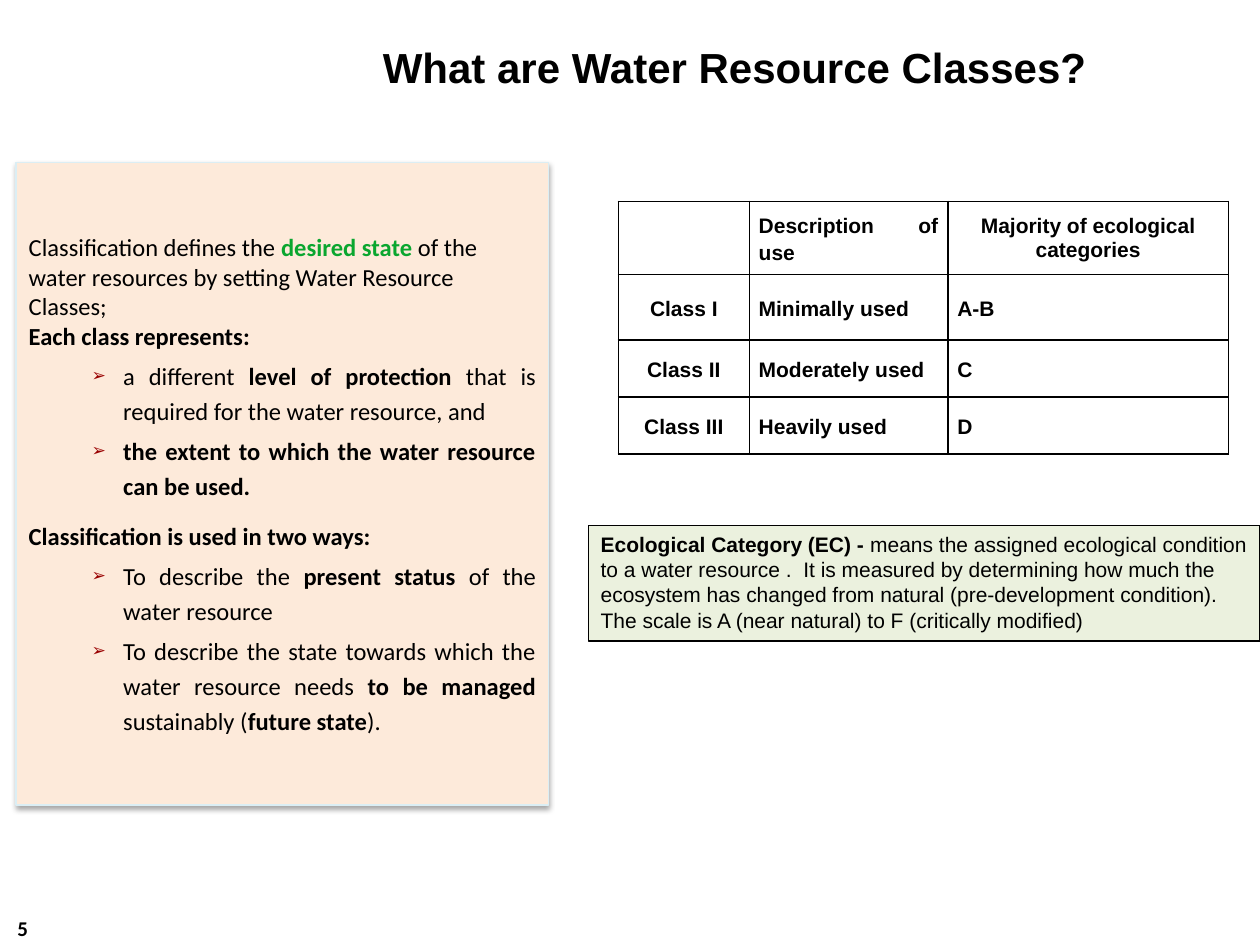
from lxml import etree
from pptx import Presentation
from pptx.dml.color import RGBColor
from pptx.enum import shapes, text
from pptx.oxml import ns
from pptx.util import Pt

COLORS = {
    "black": "000000", "white": "FFFFFF", "green": "0AA62F", "bullet": "990000",
    "peach": "FDEADA", "pale blue": "DBEEF4", "pale green": "EBF1DE",
}
LEFT, CENTER, JUSTIFY = text.PP_ALIGN.LEFT, text.PP_ALIGN.CENTER, text.PP_ALIGN.JUSTIFY


def add_xml(parent, tag, **attributes):
    return etree.SubElement(parent, ns.qn(tag), attributes)


def add_run(para, words, font, size, bold=False, color="black"):
    span = para.add_run()
    span.text = words
    span.font.name, span.font.size, span.font.bold = font, Pt(size), bold
    span.font.color.rgb = RGBColor.from_string(COLORS[color])


deck = Presentation()
deck.slide_width, deck.slide_height = Pt(720), Pt(540)
page = deck.slides.add_slide(deck.slide_layouts[1])

# Title
title = page.shapes.title
title.left, title.top, title.width, title.height = Pt(133.2), Pt(20.2), Pt(573.1), Pt(54.7)
title.text_frame.auto_size = text.MSO_AUTO_SIZE.NONE
title.text_frame.vertical_anchor = text.MSO_ANCHOR.TOP
title_para = title.text_frame.paragraphs[0]
title_para.alignment = CENTER
add_run(title_para, "What are Water Resource Classes?", "Arial", 24, True)

# Classification panel: (is bullet, space after, runs of words, bold, colour)
panel_lines = [
    (False, 0, [("Classification defines the ", False), ("desired state ", True, "green"),
                ("of the water resources by setting Water Resource Classes;", False)]),
    (False, 0, [("Each class represents:", True)]),
    (True, 0, [("a different ", False), ("level of protection ", True),
               ("that is required for the water resource, and", False)]),
    (True, 12, [("the extent to which the water resource can be used.", True)]),
    (False, 0, [("Classification is used in two ways:", True)]),
    (True, 0, [("To describe the ", False), ("present status ", True),
               ("of the water resource", False)]),
    (True, 0, [("To describe the state towards which the water resource needs ", False),
               ("to be managed ", True), ("sustainably (", False),
               ("future state", True), (").", False)]),
]
panel = page.placeholders[1]
panel.left, panel.top, panel.width, panel.height = Pt(9.2), Pt(93), Pt(304.2), Pt(367)
panel.fill.solid()
panel.fill.fore_color.rgb = RGBColor.from_string(COLORS["peach"])
panel.line.color.rgb = RGBColor.from_string(COLORS["pale blue"])
panel.line.width = Pt(0.75)
effects = add_xml(panel.element.spPr, "a:effectLst")
shadow = add_xml(effects, "a:outerShdw", blurRad=str(Pt(3.1)), dist=str(Pt(1.8)),
                 dir="5400000", rotWithShape="0")
add_xml(add_xml(shadow, "a:srgbClr", val=COLORS["black"]), "a:alpha", val="35000")

frame = panel.text_frame
frame.auto_size = text.MSO_AUTO_SIZE.NONE
frame.vertical_anchor = text.MSO_ANCHOR.MIDDLE
for index, (is_bullet, space_after, runs) in enumerate(panel_lines):
    para = frame.add_paragraph() if index else frame.paragraphs[0]
    para.level = 1 if is_bullet else 0
    props = para._p.get_or_add_pPr()
    props.set("marL", str(Pt(54 if is_bullet else 0)))
    props.set("indent", str(Pt(-18 if is_bullet else 0)))
    if is_bullet:
        add_xml(add_xml(props, "a:buClr"), "a:srgbClr", val=COLORS["bullet"])
        add_xml(props, "a:buSzPct", val="70000")
        add_xml(props, "a:buFont", typeface="Arial")
        add_xml(props, "a:buChar", char="➢")
        para.line_spacing = Pt(20)
    else:
        add_xml(props, "a:buNone")
    para.alignment = JUSTIFY if is_bullet else LEFT
    para.space_before = Pt(2.8 if is_bullet else 0)
    para.space_after = Pt(space_after)
    for words, bold, *color in runs:
        add_run(para, words, "Calibri", 14, bold, *color)

# Table of classes
class_rows = [
    ["", "Description of use", "Majority of ecological categories"],
    ["Class I", "Minimally used", "A-B"],
    ["Class II", "Moderately used", "C"],
    ["Class III", "Heavily used", "D"],
]
column_widths = [74.8, 113.5, 160.3]
row_heights = [42, 37.2, 32.6, 32.6]
table = page.shapes.add_table(4, 3, Pt(353.4), Pt(115), Pt(sum(column_widths)),
                              Pt(sum(row_heights))).table
table.first_row = table.horz_banding = False
for column, width in zip(table.columns, column_widths):
    column.width = Pt(width)
for r, (row, height, entries) in enumerate(zip(table.rows, row_heights, class_rows)):
    row.height = Pt(height)
    for c, (cell, words) in enumerate(zip(row.cells, entries)):
        cell.vertical_anchor = text.MSO_ANCHOR.MIDDLE
        cell.margin_left = cell.margin_right = Pt(5.4)
        cell.margin_top = cell.margin_bottom = Pt(0)
        for side in ("a:lnL", "a:lnR", "a:lnT", "a:lnB"):
            border = add_xml(cell._tc.get_or_add_tcPr(), side, w=str(Pt(1)))
            add_xml(add_xml(border, "a:solidFill"), "a:srgbClr", val=COLORS["black"])
        cell.fill.solid()
        cell.fill.fore_color.rgb = RGBColor.from_string(COLORS["white"])
        if not words:
            continue
        para = cell.text_frame.paragraphs[0]
        is_last_heading = r == 0 and c == 2
        para.alignment = CENTER if c == 0 or is_last_heading else JUSTIFY
        if not is_last_heading:
            para.line_spacing = 1.15
            para.space_after = Pt(2)
        add_run(para, words, "Arial", 12, True)

# Definition of the ecological category
definition = page.shapes.add_shape(shapes.MSO_SHAPE.RECTANGLE,
                                   Pt(336.2), Pt(300.2), Pt(383.8), Pt(66.2))
definition.shadow.inherit = False
definition.fill.solid()
definition.fill.fore_color.rgb = RGBColor.from_string(COLORS["pale green"])
definition.line.color.rgb = RGBColor.from_string(COLORS["black"])
definition.line.width = Pt(0.75)
definition.text_frame.word_wrap = True
definition.text_frame.vertical_anchor = text.MSO_ANCHOR.TOP
definition_para = definition.text_frame.paragraphs[0]
definition_para.alignment = LEFT
add_run(definition_para, "Ecological Category (EC) - ", "Arial", 12, True)
add_run(definition_para,
        "means the assigned ecological condition to a water resource .  It is measured by "
        "determining how much the ecosystem has changed from natural (pre-development "
        "condition). The scale is A (near natural) to F (critically modified)", "Arial", 12)

# Page number
number_box = page.shapes.add_textbox(Pt(2.9), Pt(519.8), Pt(56.2), Pt(28.8))
number_box.text_frame.word_wrap = True
add_run(number_box.text_frame.paragraphs[0], "5", "Calibri", 12, True)

deck.save("out.pptx")
